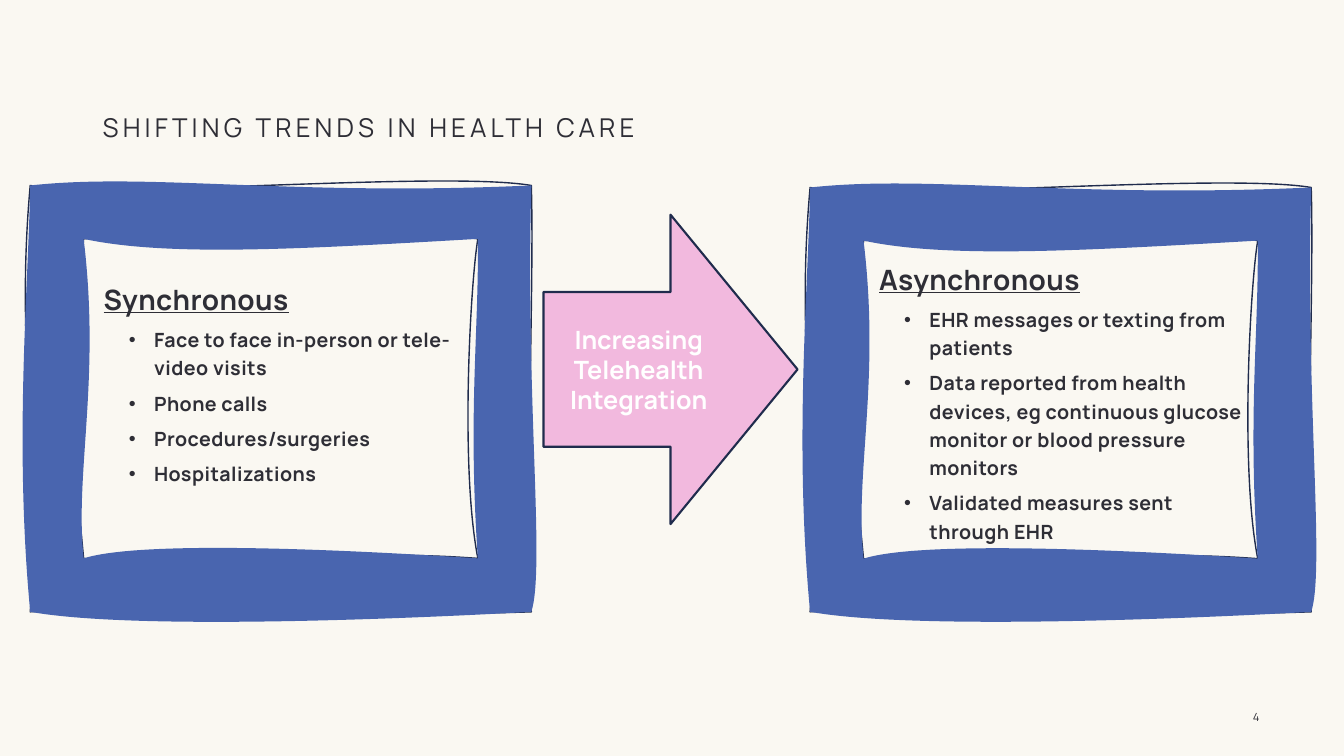
from lxml import etree
from pptx import Presentation
from pptx.dml.color import RGBColor
from pptx.enum.shapes import MSO_SHAPE
from pptx.enum.text import MSO_ANCHOR, PP_ALIGN
from pptx.oxml.ns import qn
from pptx.util import Pt

ARROW = MSO_SHAPE.RIGHT_ARROW
TOP, MIDDLE, BOTTOM = MSO_ANCHOR.TOP, MSO_ANCHOR.MIDDLE, MSO_ANCHOR.BOTTOM
LEFT, CENTER = PP_ALIGN.LEFT, PP_ALIGN.CENTER
CREAM = RGBColor(0xFA, 0xF8, 0xF2)
INK = RGBColor(0x2E, 0x2E, 0x36)
BLUE = RGBColor(0x49, 0x65, 0xAF)
NAVY = RGBColor(0x20, 0x2C, 0x4D)
PINK = RGBColor(0xF2, 0xB9, 0xDE)
WHITE = RGBColor(0xFF, 0xFF, 0xFF)
FONT = "Manrope"
CELL = 9144
COLS, ROWS = 1333, 750

deck = Presentation()
deck.slide_width, deck.slide_height = COLS * CELL, ROWS * CELL
slide = deck.slides.add_slide(deck.slide_layouts[6])
slide.background.fill.solid()
slide.background.fill.fore_color.rgb = CREAM
shapes = slide.shapes


def write(frame, text, size=14, color=INK, bold=False, under=False, track=0,
          align=LEFT, anchor=TOP, lead=1.2, before=0, margin=0):
    frame.word_wrap = True
    frame.vertical_anchor = anchor
    para = frame.paragraphs[0]
    if para.runs:
        para = frame.add_paragraph()
    if margin:
        props = para._p.get_or_add_pPr()
        props.set("marL", str(margin * CELL))
        props.set("indent", str(-25 * CELL))
        etree.SubElement(props, qn("a:buFont")).set("typeface", "Arial")
        etree.SubElement(props, qn("a:buChar")).set("char", "•")
    para.alignment = align
    para.line_spacing = lead
    para.space_before = Pt(before)
    run = para.add_run()
    run.text = text
    font = run.font
    font.name, font.size, font.bold, font.underline = FONT, Pt(size), bold, under
    font.color.rgb = color
    run._r.get_or_add_rPr().set("spc", str(round(track * 100)))


def trace(route, loops):
    for loop in loops:
        for i in range(0, len(loop), 3):
            step = etree.SubElement(route, qn("a:cubicBezTo" if i else "a:moveTo"))
            for x, y in loop[max(i - 2, 0):i + 1]:
                dot = etree.SubElement(step, qn("a:pt"))
                dot.set("x", str((x - 30) * CELL))
                dot.set("y", str((y - 184) * CELL))
        etree.SubElement(route, qn("a:close"))


title = shapes.add_textbox(92 * CELL, 87 * CELL, 1096 * CELL, 59 * CELL)
write(title.text_frame, "SHIFTING TRENDS IN HEALTH CARE", size=18.5, track=3, anchor=BOTTOM)

lists = [
    (837, 249, 410, "Asynchronous", [
        "EHR messages or texting from patients",
        "Data reported from health devices, eg continuous glucose monitor "
        "or blood pressure monitors",
        "Validated measures sent through EHR"]),
    (68, 269, 407, "Synchronous", [
        "Face to face in-person or tele-video visits",
        "Phone calls",
        "Procedures/surgeries",
        "Hospitalizations"]),
]
for x, y, wide, head, items in lists:
    frame = shapes.add_textbox(x * CELL, y * CELL, wide * CELL, 463 * CELL).text_frame
    write(frame, head, size=20, bold=True, under=True, track=0.3, margin=25)
    for item in items:
        write(frame, item, bold=True, track=0.3, before=5, margin=75)

number = shapes.add_textbox(1222 * CELL, 691 * CELL, 48 * CELL, 40 * CELL)
write(number.text_frame, "4", size=8, track=1, align=CENTER, anchor=MIDDLE, lead=1.0)

edge = [
    [(30, 184), (102, 198), (439, 169), (527, 184), (530, 283), (521, 474), (527, 607),
     (362, 613), (258, 593), (30, 607), (44, 461), (14, 362), (30, 184)],
    [(83, 237), (68, 391), (70, 418), (83, 554), (217, 570), (312, 542), (474, 554),
     (456, 461), (467, 278), (474, 237), (365, 219), (144, 231), (83, 237)],
]
band = [
    [(30, 184), (148, 171), (288, 195), (527, 184), (521, 393), (541, 564), (527, 607),
     (421, 613), (136, 626), (30, 607), (14, 438), (28, 289), (30, 184)],
    [(83, 237), (100, 377), (74, 469), (83, 554), (139, 536), (339, 545), (474, 554),
     (464, 409), (475, 330), (474, 237), (301, 247), (166, 255), (83, 237)],
]
wide, high = 497, 423
for x, y, tall in ((30, 184, high), (803.5, 186, 421)):
    pen = shapes.build_freeform(0, 0, scale=CELL)
    pen.add_line_segments([(wide, 0), (wide, high), (0, high)], close=True)
    box = pen.convert_to_shape(round(x * CELL), y * CELL)
    box.height = tall * CELL
    routes = next(box._element.iter(qn("a:pathLst")))
    routes.remove(routes[0])
    for loops, key, value in ((edge, "fill", "none"), (band, "stroke", "0")):
        route = etree.SubElement(routes, qn("a:path"))
        route.set("w", str(wide * CELL))
        route.set("h", str(high * CELL))
        route.set(key, value)
        trace(route, loops)
    box.shadow.inherit = False
    box.fill.solid()
    box.fill.fore_color.rgb = BLUE
    box.line.color.rgb = NAVY
    box.line.width = Pt(1)

arrow = shapes.add_shape(ARROW, 539 * CELL, 213 * CELL, 252 * CELL, 307 * CELL)
arrow.shadow.inherit = False
arrow.fill.solid()
arrow.fill.fore_color.rgb = PINK
arrow.line.color.rgb = NAVY
arrow.line.width = Pt(1.5)
write(arrow.text_frame, "Increasing Telehealth Integration", size=18, color=WHITE,
      bold=True, align=CENTER, anchor=MIDDLE, lead=1.0)

deck.save("out.pptx")
